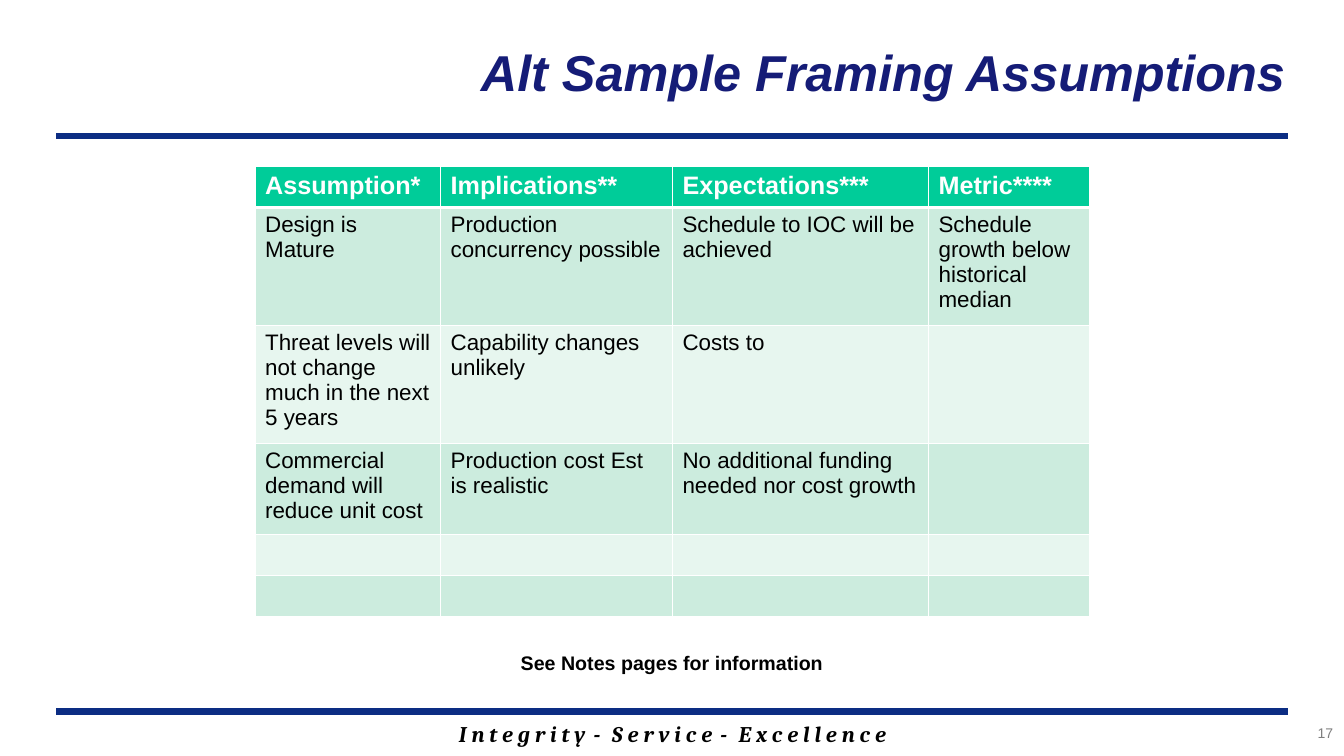
"""Build the framing assumptions slide with its table, rules and footer."""
import lxml.etree
import pptx
import pptx.dml.color
import pptx.enum.text
import pptx.oxml.ns
import pptx.util

RGBColor = pptx.dml.color.RGBColor
Inches = pptx.util.Inches
Pt = pptx.util.Pt
ALIGN = pptx.enum.text.PP_ALIGN
ANCHOR = pptx.enum.text.MSO_ANCHOR
qn = pptx.oxml.ns.qn

WHITE = RGBColor(0xFF, 0xFF, 0xFF)
BLACK = RGBColor(0x00, 0x00, 0x00)
GRAY = RGBColor(0x7F, 0x7F, 0x7F)
NAVY = RGBColor(0x15, 0x1C, 0x77)
RULE_BLUE = RGBColor(0x0C, 0x2D, 0x83)
HEADER_GREEN = RGBColor(0x00, 0xCC, 0x99)
BAND_GREENS = (RGBColor(0xCC, 0xEC, 0xDE), RGBColor(0xE7, 0xF6, 0xEF))

SLIDE_WIDTH, SLIDE_HEIGHT = 13.33, 7.5
RULE_MARGIN = 0.56
RULE_TOPS = (1.35, 7.06)

TITLE = "Alt Sample Framing Assumptions"
NOTE = "See Notes pages for information"
MOTTO = ("Integrity", "Service", "Excellence")
DASH_SPACING = 2.35
PAGE_NUMBER = "17"

TABLE_LEFT, TABLE_TOP = 2.53, 1.65
COLUMN_WIDTHS = (1.84, 2.3, 2.54, 1.6)
ROW_HEIGHTS = (0.41, 1.17, 1.17, 0.9, 0.41, 0.41)
ROWS = (
    ("Assumption*", "Implications**", "Expectations***", "Metric****"),
    ("Design is Mature", "Production concurrency possible",
     "Schedule to IOC will be achieved", "Schedule growth below historical median"),
    ("Threat levels will not change much in the next 5 years",
     "Capability changes unlikely", "Costs to", ""),
    ("Commercial demand will reduce unit cost", "Production cost Est is realistic",
     "No additional funding needed nor cost growth", ""),
    ("",) * 4,
    ("",) * 4,
)


def add_run(paragraph, text, size, color, bold=False, italic=False, name="Arial"):
    run = paragraph.add_run()
    run.text = text
    font = run.font
    font.name, font.size, font.bold, font.italic = name, Pt(size), bold, italic
    font.color.rgb = color
    return run


def add_box(slide, left, top, width, height, align, anchor=ANCHOR.TOP, wrap=True):
    shape = slide.shapes.add_textbox(*map(Inches, (left, top, width, height)))
    shape.text_frame.word_wrap = wrap
    shape.text_frame.vertical_anchor = anchor
    paragraph = shape.text_frame.paragraphs[0]
    paragraph.alignment = align
    return paragraph


def add_rule(slide, top):
    line = slide.shapes.add_connector(
        pptx.enum.shapes.MSO_CONNECTOR.STRAIGHT,
        Inches(RULE_MARGIN), Inches(top),
        Inches(SLIDE_WIDTH - RULE_MARGIN), Inches(top))
    line.line.color.rgb = RULE_BLUE
    line.line.width = Pt(4.5)
    lxml.etree.SubElement(line._element.spPr, qn("a:effectLst"))


def set_borders(cell, widths):
    properties = cell._tc.get_or_add_tcPr()
    for side, width in widths.items():
        border = lxml.etree.SubElement(properties, qn("a:ln" + side), w=str(Pt(width)))
        fill = lxml.etree.SubElement(border, qn("a:solidFill"))
        lxml.etree.SubElement(fill, qn("a:srgbClr"), val=str(WHITE))


def add_table(slide):
    frame = slide.shapes.add_table(
        len(ROW_HEIGHTS), len(COLUMN_WIDTHS), Inches(TABLE_LEFT), Inches(TABLE_TOP),
        Inches(sum(COLUMN_WIDTHS)), Inches(sum(ROW_HEIGHTS)))
    table = frame.table
    for column, width in zip(table.columns, COLUMN_WIDTHS):
        column.width = Inches(width)
    for index, (row, height, texts) in enumerate(zip(table.rows, ROW_HEIGHTS, ROWS)):
        row.height = Inches(height)
        header = index == 0
        for cell, text in zip(row.cells, texts):
            set_borders(cell, {"L": 1, "R": 1, "T": 3 if index == 1 else 1,
                               "B": 3 if header else 1})
            cell.fill.solid()
            cell.fill.fore_color.rgb = HEADER_GREEN if header else BAND_GREENS[(index - 1) % 2]
            if text:
                add_run(cell.text_frame.paragraphs[0], text, 18 if header else 16,
                        WHITE if header else BLACK, bold=header)


def add_motto(slide):
    paragraph = add_box(slide, 1.89, 7.1, 9.56, 0.37, ALIGN.CENTER)
    style = (16, BLACK, True, True, "Cambria")
    for index, word in enumerate(MOTTO):
        if index:
            dash = add_run(paragraph, " - ", *style)
            dash.font._element.set("spc", str(round(DASH_SPACING * 100)))
        add_run(paragraph, " ".join(word), *style)


def main():
    presentation = pptx.Presentation()
    presentation.slide_width = Inches(SLIDE_WIDTH)
    presentation.slide_height = Inches(SLIDE_HEIGHT)
    slide = presentation.slides.add_slide(presentation.slide_layouts[6])
    add_motto(slide)
    for top in RULE_TOPS:
        add_rule(slide, top)
    title = add_box(slide, 2.43, 0.08, 10.42, 1.25, ALIGN.RIGHT, ANCHOR.MIDDLE)
    add_run(title, TITLE, 36, NAVY, bold=True, italic=True)
    add_table(slide)
    note = add_box(slide, 5.06, 6.41, 3.21, 0.34, ALIGN.CENTER, wrap=False)
    add_run(note, NOTE, 14, BLACK, bold=True)
    number = add_box(slide, 11.65, 7.14, 1.67, 0.33, ALIGN.RIGHT)
    add_run(number, PAGE_NUMBER, 10, GRAY)
    presentation.save("out.pptx")


if __name__ == "__main__":
    main()
